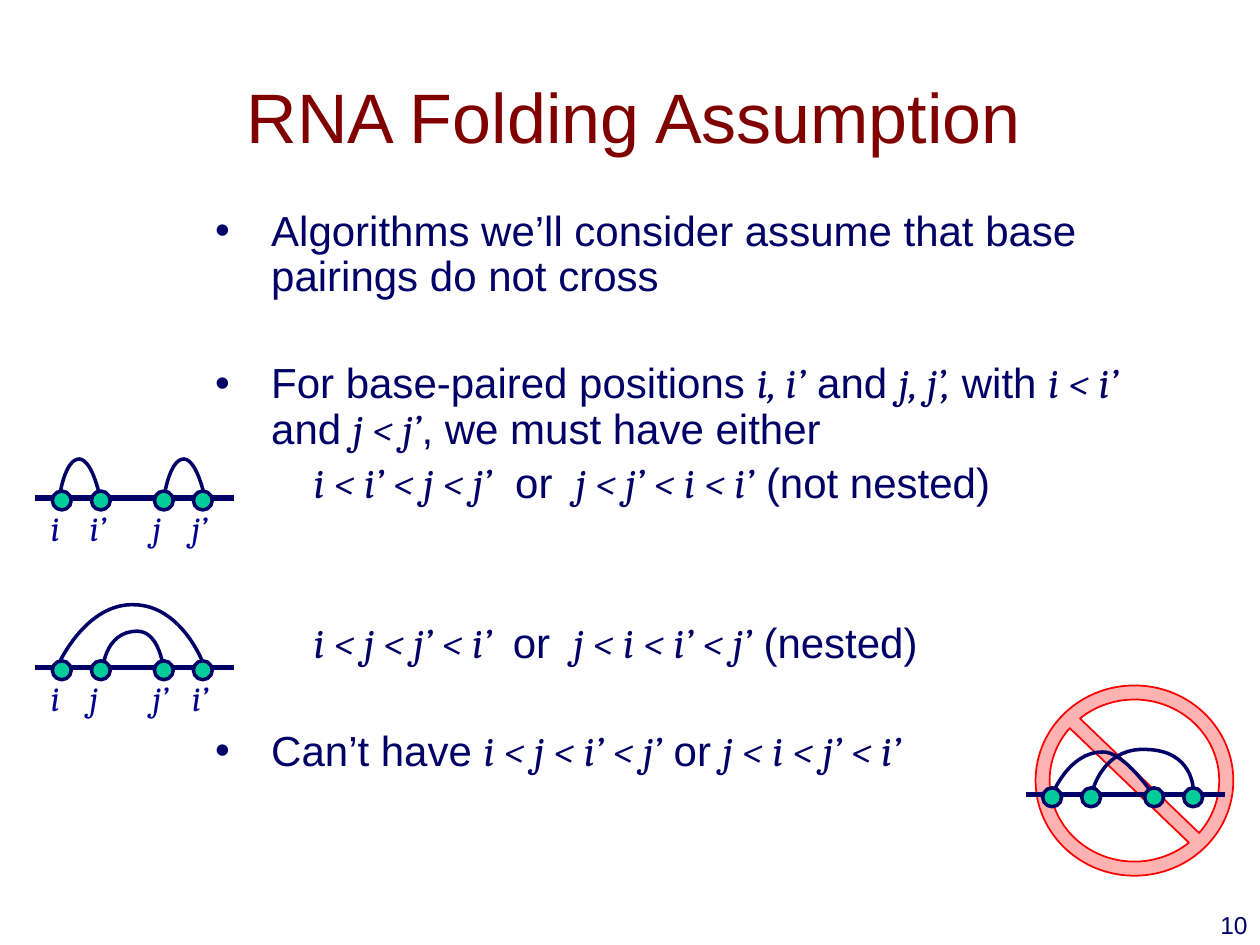
from lxml.etree import SubElement
from pptx import Presentation
from pptx.dml.color import RGBColor
from pptx.enum.shapes import MSO_CONNECTOR as CONN, MSO_SHAPE as SHAPE
from pptx.enum.text import MSO_ANCHOR as ANCHOR, MSO_AUTO_SIZE as AUTO, PP_ALIGN as ALIGN
from pptx.oxml.ns import qn
from pptx.util import Pt

NAVY, MAROON, GREEN, RED, LABEL = "000066", "800000", "00CC99", "FF0000", "000090"
LINE_W, DOT = 113.8, 10.8
DOT_XS = (9.7, 32, 68, 90.3)
LABEL_WIDTHS = {"i": 25.9, "i’": 32.4, "j": 27.4, "j’": 33.8}
GAP, BLANK = 5.2, 30.2

BODY = [
    (0, 0, "Algorithms we’ll consider assume that base pairings do not cross"),
    (0, 1, "For base-paired positions *i, i’* and *j, j’,* with *i < i’* and *j < j’*"
           ", we must have either"),
    (1, 0, "\t*i < i’ < j < j’*  or  *j < j’ < i < i’* (not nested)"),
    (1, 2, "\t*i < j < j’ < i’ * or  *j < i < i’ < j’* (nested)"),
    (0, 1, "Can’t have *i < j < i’ < j’* or *j < i < j’ < i’*"),
]

SMALL_ARC = [(13.7, 0), (16.6, -22.3), (25.2, -22.3), (33.1, -21.6), (37.4, 1.4)]
SEPARATE = [SMALL_ARC, [(x + 59.8, y) for x, y in SMALL_ARC]]
NESTED = [
    [(13.7, -2.9), (29.5, -37.4), (56.9, -36), (83.5, -35.3), (95.8, -2.9)],
    [(38.2, 2.9), (38.9, -20.9), (58.3, -20.9), (71.3, -20.9), (73.4, 1.4)],
]
CROSSED = [
    [(37.4, 0.7), (42.5, -27.4), (69.1, -25.9), (95.8, -25.2), (95.8, -2.9)],
    [(15.1, 0), (24.5, -24.5), (43.9, -24.5), (56.2, -25.2), (73.4, 0.7)],
]


def rgb(value):
    """Turn a hex string into a colour."""
    return RGBColor.from_string(value)


def apply(obj, formats):
    """Set each attribute named in the dict."""
    for name, value in formats.items():
        setattr(obj, name, value)


def style(sp, fill, line, width):
    """Give a shape its fill and outline, without a shadow."""
    sp.shadow.inherit = False
    if fill:
        sp.fill.solid()
        sp.fill.fore_color.rgb = rgb(fill)
    else:
        sp.fill.background()
    sp.line.color.rgb = rgb(line)
    sp.line.width = Pt(width)


def add_run(p, text, size, color, italic=False):
    """Add a run, with Cambria for italic formulas and Arial otherwise."""
    r = p.add_run()
    r.text = text
    apply(r.font, {"size": Pt(size), "name": "Cambria" if italic else "Arial",
                   "italic": italic})
    r.font.color.rgb = rgb(color)


def text_frame(s, box, **formats):
    """Add a text box and return its frame."""
    tf = s.shapes.add_textbox(*map(Pt, box)).text_frame
    apply(tf, {"word_wrap": True, **formats})
    return tf


def add_line_of_text(s, box, text, size, color, align, italic=False, **formats):
    """Add a text box that holds one run."""
    p = text_frame(s, box, **formats).paragraphs[0]
    p.alignment = align
    add_run(p, text, size, color, italic)


def add_body(s, box):
    """Write the bulleted statements and their indented formulas."""
    tf = text_frame(s, box, vertical_anchor=ANCHOR.MIDDLE, margin_right=Pt(2.9))
    for i, (level, blanks, text) in enumerate(BODY):
        p = tf.add_paragraph() if i else tf.paragraphs[0]
        apply(p, {"level": level, "line_spacing": 0.9,
                  "space_before": Pt(GAP + BLANK * blanks)})
        pPr = p._p.get_or_add_pPr()
        pPr.set("marL", str(Pt(74.2 if level else 50)))
        pPr.set("indent", str(Pt(-32)))
        if level:
            SubElement(pPr, qn("a:buNone"))
        else:
            SubElement(pPr, qn("a:buFont")).set("typeface", "Arial")
            SubElement(pPr, qn("a:buChar")).set("char", "•")
        for k, part in enumerate(text.split("*")):
            if part:
                add_run(p, part, 24, NAVY, k % 2 == 1)


def add_arc(shapes, left, top, arc):
    """Draw a pairing arc as two cubic curves that meet at its crest."""
    points = [(Pt(left + x), Pt(top + y)) for x, y in arc]
    start, rise, crest, fall, end = points
    builder = shapes.build_freeform(*start)
    builder.add_line_segments([crest, end], close=False)
    sp = builder.convert_to_shape()
    x0, y0 = (min(axis) for axis in zip(start, crest, end))
    curves = ((start, rise, crest), (fall, end, end))
    for segment, curve in zip(list(sp._element.iter(qn("a:lnTo"))), curves):
        cubic = segment.getparent().makeelement(qn("a:cubicBezTo"))
        for x, y in curve:
            pt = SubElement(cubic, qn("a:pt"))
            pt.set("x", str(x - x0))
            pt.set("y", str(y - y0))
        segment.getparent().replace(segment, cubic)
    style(sp, None, NAVY, 2)


def add_strand(shapes, left, top, arcs):
    """Draw a strand with four bases and its pairing arcs."""
    line = shapes.add_connector(CONN.STRAIGHT, Pt(left), Pt(top),
                                Pt(left + LINE_W), Pt(top))
    line.line.color.rgb = rgb(NAVY)
    line.line.width = Pt(3)
    SubElement(line._element.spPr, qn("a:effectLst"))
    for arc in arcs:
        add_arc(shapes, left, top, arc)
    for x in DOT_XS:
        dot = shapes.add_shape(SHAPE.OVAL, Pt(left + x), Pt(top - 4), Pt(DOT), Pt(DOT))
        style(dot, GREEN, NAVY, 2)


def add_labelled_strand(s, left, top, arcs, labels):
    """Draw a grouped strand with a label under each base."""
    add_strand(s.shapes.add_group_shape().shapes, left, top, arcs)
    for x, label in zip(DOT_XS, labels):
        box = (left + x - 8, top + 1.4, LABEL_WIDTHS[label], 31.7)
        add_line_of_text(s, box, label, 20, LABEL, ALIGN.LEFT, True,
                         word_wrap=False, auto_size=AUTO.SHAPE_TO_FIT_TEXT)


def add_forbidden_sign(s, box):
    """Draw the translucent prohibition sign."""
    sign = s.shapes.add_shape(SHAPE.NO_SYMBOL, *map(Pt, box))
    sign.adjustments[0] = 0.074
    style(sign, RED, RED, 1)
    color = sign._element.spPr.find(qn("a:solidFill"))[0]
    SubElement(color, qn("a:alpha")).set("val", "30000")


def build_slide(prs):
    """Place every region of the slide."""
    s = prs.slides.add_slide(prs.slide_layouts[6])
    add_forbidden_sign(s, (591.8, 391.7, 113, 108.7))
    add_line_of_text(s, (54, 20.9, 612, 90), "RNA Folding Assumption", 40, MAROON,
                     ALIGN.CENTER, vertical_anchor=ANCHOR.MIDDLE, margin_right=Pt(2.9))
    add_body(s, (97.9, 123.1, 580.3, 316.8))
    add_labelled_strand(s, 20.2, 381.6, NESTED, ("i", "j", "j’", "i’"))
    add_strand(s.shapes, 586.1, 454.2, CROSSED)
    add_labelled_strand(s, 20.2, 284.6, SEPARATE, ("i", "i’", "j", "j’"))
    add_line_of_text(s, (570.2, 516.7, 149.8, 36), "10", 14, NAVY, ALIGN.RIGHT)


def main():
    """Build and save the presentation."""
    prs = Presentation()
    apply(prs, {"slide_width": Pt(720), "slide_height": Pt(540)})
    build_slide(prs)
    prs.save("out.pptx")


if __name__ == "__main__":
    main()
